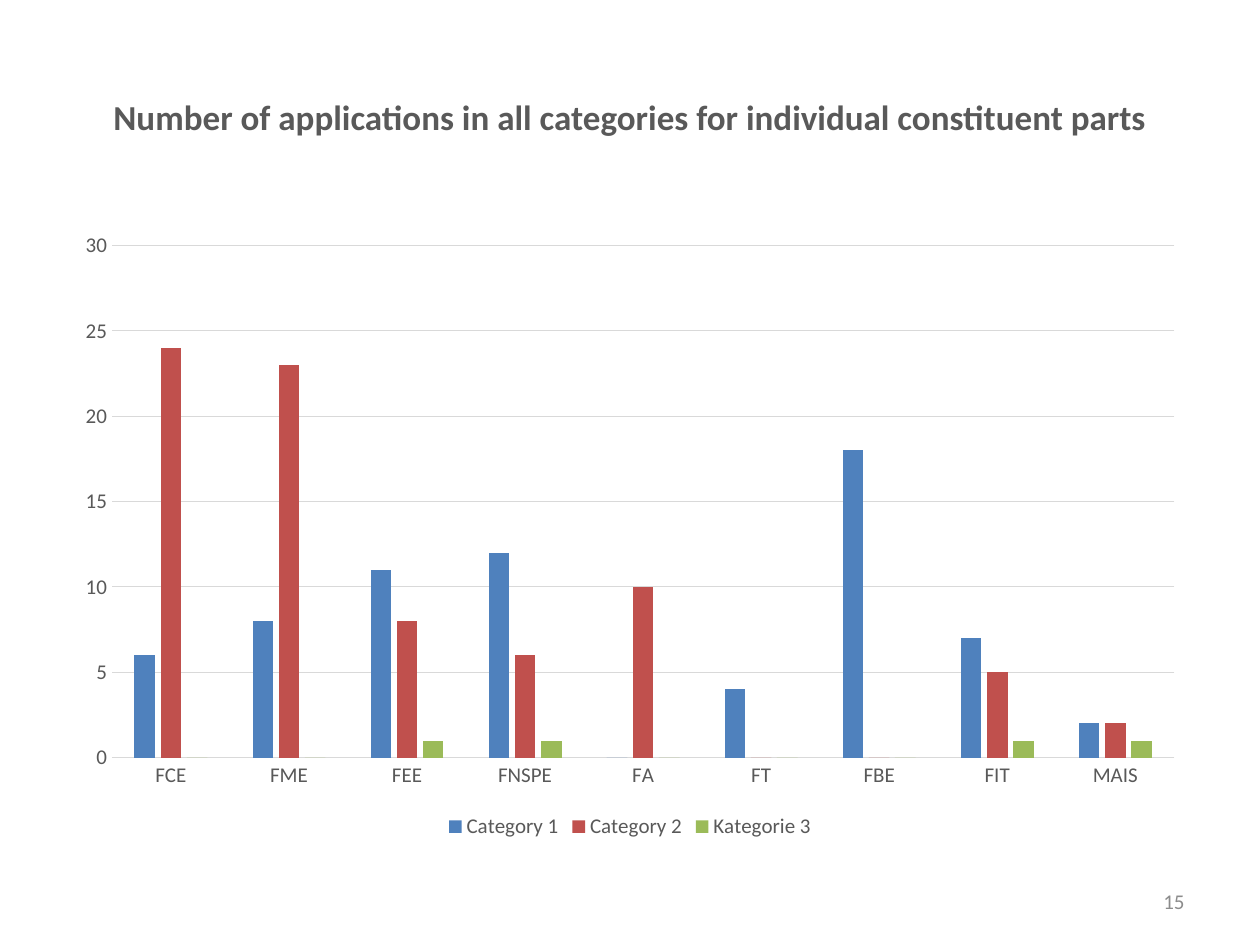
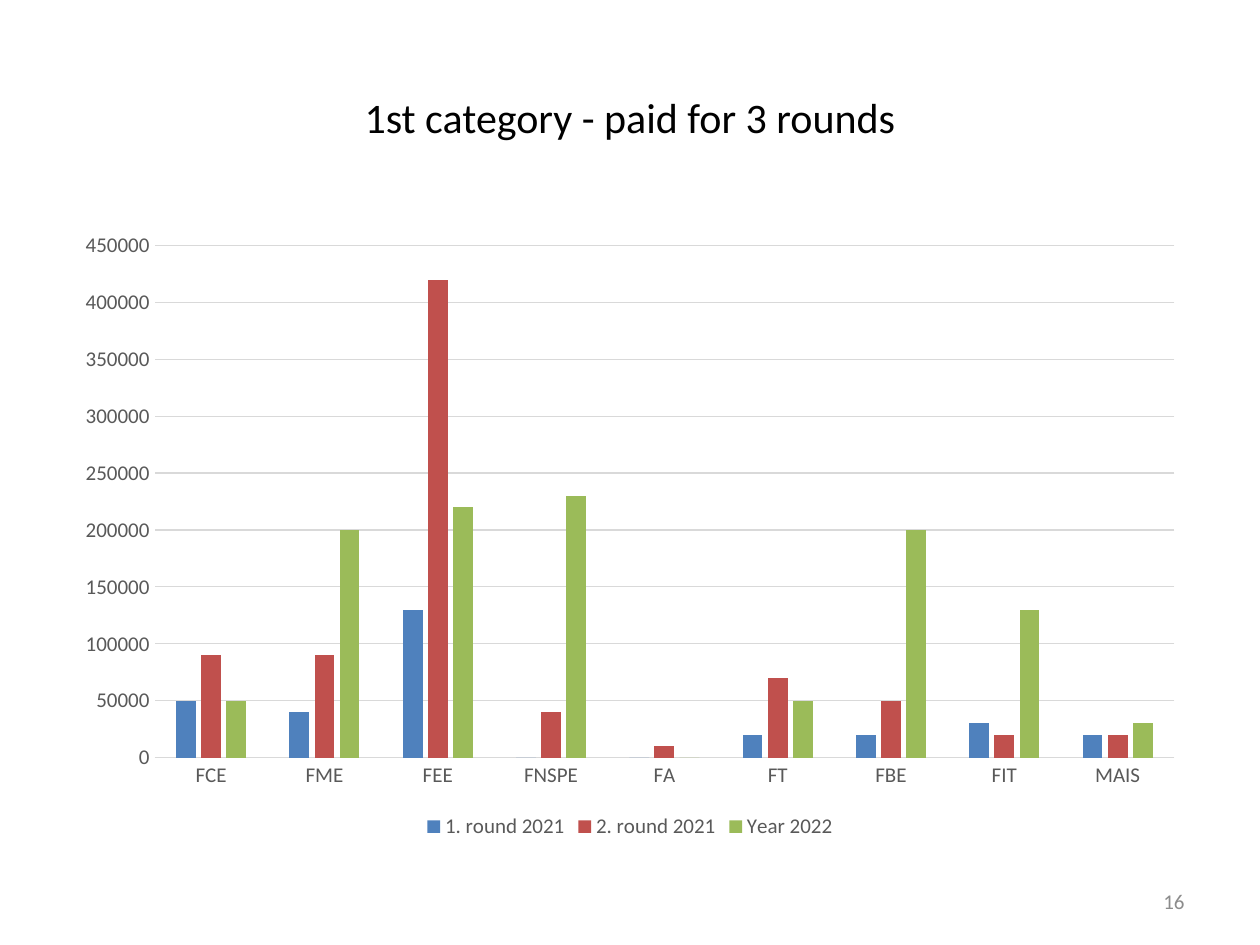
from pptx import Presentation
from pptx.chart.data import CategoryChartData
from pptx.dml.color import RGBColor
from pptx.enum.chart import XL_CHART_TYPE as ChartType
from pptx.enum.chart import XL_LEGEND_POSITION as LegendPosition
from pptx.enum.chart import XL_TICK_MARK as TickMark
from pptx.enum.text import MSO_ANCHOR as Anchor
from pptx.enum.text import PP_ALIGN as Align
from pptx.util import Inches, Pt

# Shared look
FONT = "Calibri"
BLACK = RGBColor(0x00, 0x00, 0x00)
DARK_GREY = RGBColor(0x59, 0x59, 0x59)
NUMBER_GREY = RGBColor(0x8C, 0x8C, 0x8C)
LINE_GREY = RGBColor(0xD9, 0xD9, 0xD9)
SERIES_COLORS = (
    RGBColor(0x4F, 0x81, 0xBD),
    RGBColor(0xC0, 0x50, 0x4D),
    RGBColor(0x9B, 0xBB, 0x59),
)

# Slide size and regions as (left, top, width, height) shares of it
SLIDE_SIZE = (Inches(10), Inches(7.5))
MARGIN = 0.05
CONTENT_WIDTH = 1 - 2 * MARGIN
NUMBER_WIDTH = 0.233
TITLE_BOX = (MARGIN, 0.04, CONTENT_WIDTH, 1 / 6)
CHART_BOX = (MARGIN, 7 / 30, CONTENT_WIDTH, 0.66)
NUMBER_BOX = (1 - MARGIN - NUMBER_WIDTH, 0.927, NUMBER_WIDTH, 0.053)

FACULTIES = ("FCE", "FME", "FEE", "FNSPE", "FA", "FT", "FBE", "FIT", "MAIS")
SLIDES = (
    {
        "title": "Number of applications in all categories "
                 "for individual constituent parts",
        "title_style": (20, DARK_GREY, True),
        "number": 15,
        "scale": (30, 5),
        "series": {
            "Category 1": (6, 8, 11, 12, 0, 4, 18, 7, 2),
            "Category 2": (24, 23, 8, 6, 10, 0, 0, 5, 2),
            "Kategorie 3": (0, 0, 1, 1, 0, 0, 0, 1, 1),
        },
    },
    {
        "title": "1st category - paid for 3 rounds",
        "title_style": (24, BLACK, False),
        "number": 16,
        "scale": (450000, 50000),
        "series": {
            "1. round 2021": (50000, 40000, 130000, 0, 0,
                              20000, 20000, 30000, 20000),
            "2. round 2021": (90000, 90000, 420000, 40000, 10000,
                              70000, 50000, 20000, 20000),
            "Year 2022": (50000, 200000, 220000, 230000, 0,
                          50000, 200000, 130000, 30000),
        },
    },
)


def to_lengths(box):
    """Turn shares of the slide into lengths."""
    return [round(share * SLIDE_SIZE[index % 2])
            for index, share in enumerate(box)]


def style_font(font, size, color, bold=False):
    font.name = FONT
    font.size = Pt(size)
    font.bold = bold
    font.color.rgb = color


def style_line(line):
    line.color.rgb = LINE_GREY
    line.width = Pt(0.75)


def write_text(shape, text, align, size, color, bold=False):
    frame = shape.text_frame
    frame.text = text
    frame.word_wrap = True
    frame.vertical_anchor = Anchor.MIDDLE
    paragraph = frame.paragraphs[0]
    paragraph.alignment = align
    style_font(paragraph.runs[0].font, size, color, bold)


def add_title(slide, box, text, style):
    title = slide.shapes.title
    title.left, title.top, title.width, title.height = to_lengths(box)
    write_text(title, text, Align.CENTER, *style)


def add_slide_number(slide, box, number):
    text_box = slide.shapes.add_textbox(*to_lengths(box))
    write_text(text_box, str(number), Align.RIGHT, 12, NUMBER_GREY)


def add_column_chart(slide, box, series_values, scale):
    data = CategoryChartData(number_format="General")
    data.categories = FACULTIES
    for name, values in series_values.items():
        data.add_series(name, values)
    chart = slide.shapes.add_chart(
        ChartType.COLUMN_CLUSTERED, *to_lengths(box), data).chart
    chart.has_title = False
    style_font(chart.font, 10, BLACK)

    # Columns
    plot = chart.plots[0]
    plot.gap_width = 219
    plot.overlap = -27
    plot.vary_by_categories = False
    for series, color in zip(plot.series, SERIES_COLORS):
        series.format.fill.solid()
        series.format.fill.fore_color.rgb = color
        series.invert_if_negative = False

    # Axes and gridlines
    for axis in (chart.category_axis, chart.value_axis):
        axis.major_tick_mark = axis.minor_tick_mark = TickMark.NONE
        style_font(axis.tick_labels.font, 12, DARK_GREY)
    style_line(chart.category_axis.format.line)
    value_axis = chart.value_axis
    value_axis.format.line.fill.background()
    value_axis.minimum_scale = 0
    value_axis.maximum_scale, value_axis.major_unit = scale
    style_line(value_axis.major_gridlines.format.line)

    # Legend
    chart.has_legend = True
    chart.legend.position = LegendPosition.BOTTOM
    chart.legend.include_in_layout = False
    style_font(chart.legend.font, 12, DARK_GREY)


def add_chart_slide(presentation, content):
    title_only = presentation.slide_layouts.get_by_name("Title Only")
    slide = presentation.slides.add_slide(title_only)
    add_title(slide, TITLE_BOX, content["title"], content["title_style"])
    add_slide_number(slide, NUMBER_BOX, content["number"])
    add_column_chart(slide, CHART_BOX, content["series"], content["scale"])


def main():
    presentation = Presentation()
    presentation.slide_width, presentation.slide_height = SLIDE_SIZE
    for content in SLIDES:
        add_chart_slide(presentation, content)
    presentation.save("out.pptx")


if __name__ == "__main__":
    main()
